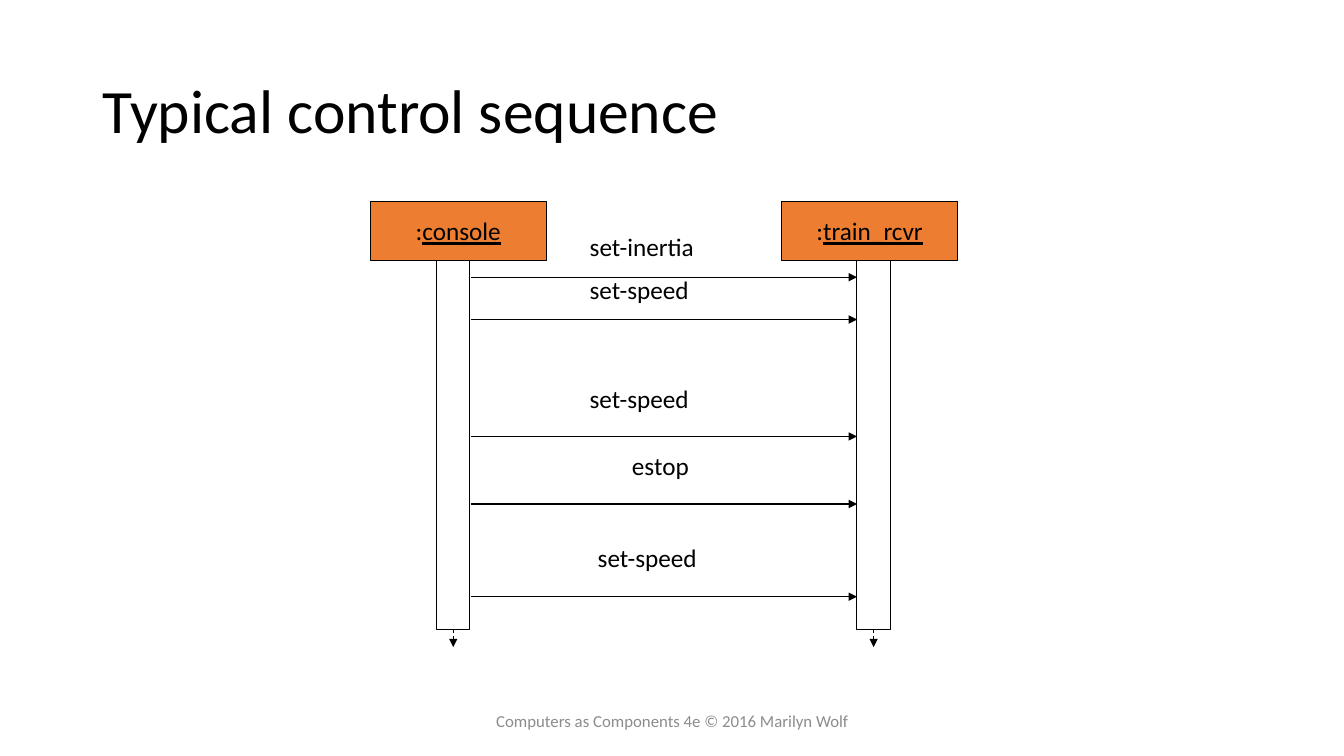
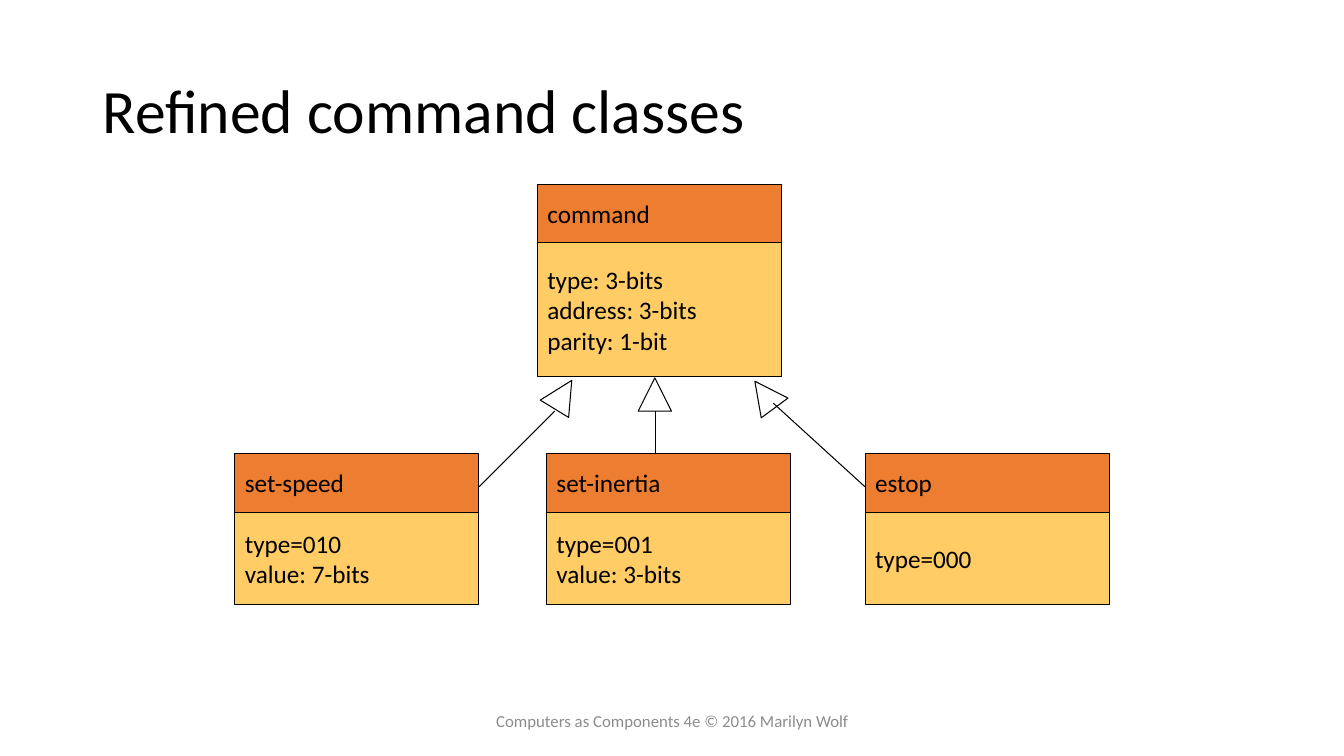
import pptx
import pptx.util
import pptx.dml.color
import pptx.enum.dml
import pptx.enum.shapes
import pptx.enum.text
import pptx.oxml.ns
import lxml.etree

Inches = pptx.util.Inches
SHAPE = pptx.enum.shapes.MSO_SHAPE
ALIGN = pptx.enum.text.PP_ALIGN
ANCHOR = pptx.enum.text.MSO_ANCHOR
AUTO = pptx.enum.text.MSO_AUTO_SIZE

COLORS = {"ink": "000000", "paper": "FFFFFF", "head": "ED7D31",
          "body": "FFCC66", "footer": "8C8C8C"}
FONT = "Calibri"
FOOTER = "Computers as Components 4e © 2016 Marilyn Wolf"


def style_box(box, text="", underlined="", size=18, color="ink", fill=None,
              align=ALIGN.LEFT, anchor=ANCHOR.MIDDLE, wrap=False,
              auto_size=AUTO.NONE, spacing=None):
    """Write text into a box, one paragraph a line; a fill also brings the outline."""
    if fill:
        box.shadow.inherit = False
        box.fill.solid()
        box.fill.fore_color.rgb = pptx.dml.color.RGBColor.from_string(COLORS[fill])
        box.line.color.rgb = pptx.dml.color.RGBColor.from_string(COLORS["ink"])
        box.line.width = pptx.util.Pt(0.75)
    frame = box.text_frame
    frame.word_wrap = wrap
    frame.auto_size = auto_size
    frame.vertical_anchor = anchor
    for index, line in enumerate(text.split("\n") if text else []):
        para = frame.add_paragraph() if index else frame.paragraphs[0]
        para.alignment = align
        para.line_spacing = spacing
        for words, underline in ((line, None), (underlined, True)):
            if words:
                span = para.add_run()
                span.text = words
                span.font.name = FONT
                span.font.size = pptx.util.Pt(size)
                span.font.underline = underline
                span.font.color.rgb = pptx.dml.color.RGBColor.from_string(COLORS[color])


def add_line(page, start, end, arrow=False, dashed=False):
    line = page.shapes.add_connector(
        pptx.enum.shapes.MSO_CONNECTOR.STRAIGHT,
        *[Inches(value) for value in (*start, *end)])
    line.line.color.rgb = pptx.dml.color.RGBColor.from_string(COLORS["ink"])
    line.line.width = pptx.util.Pt(0.75)
    if dashed:
        line.line.dash_style = pptx.enum.dml.MSO_LINE.DASH
    properties = line._element.spPr
    if arrow:
        outline = properties.find(pptx.oxml.ns.qn("a:ln"))
        lxml.etree.SubElement(outline, pptx.oxml.ns.qn("a:tailEnd"), type="triangle")
    lxml.etree.SubElement(properties, pptx.oxml.ns.qn("a:effectLst"))


deck = pptx.Presentation()
deck.slide_width, deck.slide_height = Inches(13.33), Inches(7.5)

# Shared title and footer
pages = []
for heading in ("Typical control sequence", "Refined command classes"):
    page = deck.slides.add_slide(deck.slide_layouts[5])
    title = page.shapes.title
    title.left, title.top = Inches(0.92), Inches(0.4)
    title.width, title.height = Inches(11.5), Inches(1.45)
    style_box(title, heading, size=44, wrap=True, spacing=0.9)
    footer = page.shapes.add_textbox(Inches(4.42), Inches(6.95), Inches(4.5), Inches(0.4))
    style_box(footer, FOOTER, size=12, color="footer", align=ALIGN.CENTER, wrap=True)
    pages.append(page)
sequence, classes = pages

# Sequence diagram: objects with their lifelines
HEAD_HEIGHT = 0.58
LIFE_TOP = 2 + HEAD_HEIGHT
BAR_WIDTH = 0.33
for name, head_left, bar_left in (("console", 3.67, 4.33), ("train_rcvr", 7.75, 8.5)):
    head = sequence.shapes.add_shape(
        SHAPE.RECTANGLE, Inches(head_left), Inches(2), Inches(1.75), Inches(HEAD_HEIGHT))
    style_box(head, ":", underlined=name, fill="head", align=ALIGN.CENTER)
    center = bar_left + BAR_WIDTH / 2
    add_line(sequence, (center, LIFE_TOP), (center, 6.42), arrow=True, dashed=True)
    bar = sequence.shapes.add_shape(
        SHAPE.RECTANGLE, Inches(bar_left), Inches(LIFE_TOP), Inches(BAR_WIDTH), Inches(3.67))
    style_box(bar, fill="paper")

# Messages: label, its left, top and width, then the height of its arrow
for label, left, top, width, arrow_y in (
        ("set-inertia", 5.75, 2.25, 1.25, 2.75),
        ("set-speed", 5.75, 2.67, 1.2, 3.17),
        ("set-speed", 5.75, 3.75, 1.2, 4.33),
        ("estop", 6.17, 4.42, 0.77, 5),
        ("set-speed", 5.83, 5.33, 1.2, 5.92)):
    box = sequence.shapes.add_textbox(Inches(left), Inches(top), Inches(width), Inches(0.4))
    style_box(box, label, anchor=ANCHOR.TOP, auto_size=AUTO.SHAPE_TO_FIT_TEXT)
    add_line(sequence, (4.67, arrow_y), (8.5, arrow_y), arrow=True)

# Class diagram: name compartment above attribute compartment
for name, attributes, left, top, body_height in (
        ("command", "type: 3-bits\naddress: 3-bits\nparity: 1-bit", 5.33, 1.83, 1.33),
        ("set-speed", "type=010\nvalue: 7-bits", 2.33, 4.5, 0.92),
        ("set-inertia", "type=001\nvalue: 3-bits", 5.42, 4.5, 0.92),
        ("estop", "type=000", 8.58, 4.5, 0.92)):
    for text, fill, box_top, height in (
            (name, "head", top, HEAD_HEIGHT),
            (attributes, "body", top + HEAD_HEIGHT, body_height)):
        box = classes.shapes.add_shape(
            SHAPE.RECTANGLE, Inches(left), Inches(box_top), Inches(2.42), Inches(height))
        style_box(box, text, fill=fill)

# Inheritance: hollow triangle and the line to the subclass
for left, rotation, start, end in (
        (5.42, 31.4, (5.5, 4.08), (4.75, 4.83)),
        (6.33, 0, (6.5, 4.08), (6.5, 4.5)),
        (7.42, 323.5, (7.67, 4), (8.58, 4.83))):
    triangle = classes.shapes.add_shape(
        SHAPE.ISOSCELES_TRIANGLE, Inches(left), Inches(3.75), Inches(0.33), Inches(0.33))
    triangle.rotation = rotation
    style_box(triangle, fill="paper")
    add_line(classes, start, end)

deck.save("out.pptx")
